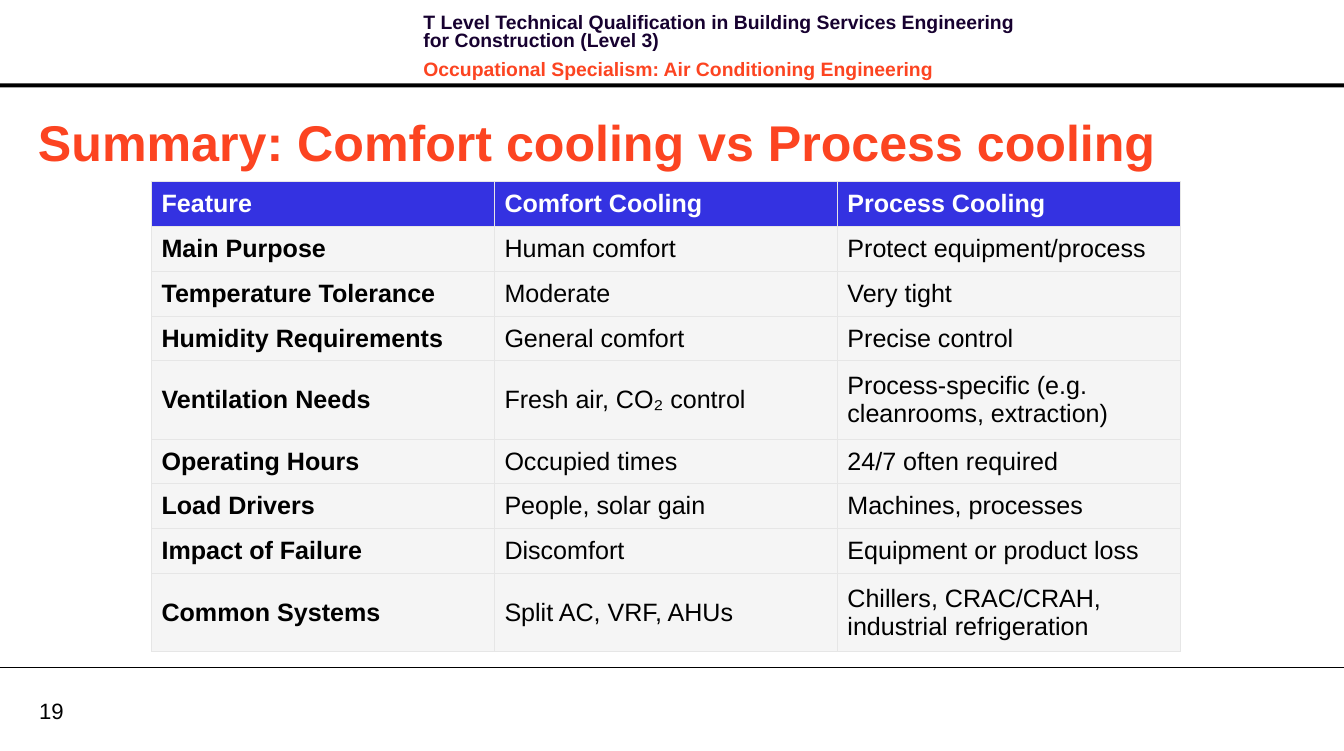
from lxml import etree
from pptx import Presentation
from pptx.dml.color import RGBColor
from pptx.enum.shapes import MSO_CONNECTOR, MSO_SHAPE
from pptx.enum.text import MSO_ANCHOR
from pptx.oxml.ns import qn
from pptx.util import Inches, Pt

MIDDLE, TOP = MSO_ANCHOR.MIDDLE, MSO_ANCHOR.TOP
RECTANGLE, STRAIGHT = MSO_SHAPE.RECTANGLE, MSO_CONNECTOR.STRAIGHT
COLORS = {
    "black": "000000", "white": "FFFFFF", "navy": "170130", "orange": "FC4421",
    "header": "3432E1", "body": "F5F5F5", "border": "E6E6E6",
}
WIDTH, HEIGHT = 13.39, 7.48


def rgb(name):
    return RGBColor.from_string(COLORS[name])


def style(paragraph, text, size, color, bold=False):
    """Fill a paragraph with one Arial run."""
    run = paragraph.add_run()
    run.text = text
    for key, value in {"name": "Arial", "size": Pt(size), "bold": bold}.items():
        setattr(run.font, key, value)
    run.font.color.rgb = rgb(color)


prs = Presentation()
prs.slide_width, prs.slide_height = Inches(WIDTH), Inches(HEIGHT)
slide = prs.slides.add_slide(prs.slide_layouts[6])
shapes = slide.shapes

# Header bar and footer rule
header_bar = shapes.add_shape(RECTANGLE, 0, Inches(0.83), Inches(WIDTH), Inches(0.04))
header_bar.shadow.inherit = False
header_bar.fill.solid()
header_bar.fill.fore_color.rgb = rgb("black")
header_bar.line.fill.background()

footer_rule = shapes.add_connector(STRAIGHT, 0, Inches(6.65), Inches(WIDTH), Inches(6.65))
footer_rule.line.color.rgb = rgb("black")
footer_rule.line.width = Pt(0.75)
etree.SubElement(footer_rule._element.spPr, qn("a:effectLst"))

# Text boxes: place, horizontal and vertical inset, anchor, paragraph format, lines
course_format = {"line_spacing": Pt(13), "space_after": Pt(4)}
texts = [
    ((4.12, 0.1, 6.17, 0.64), (0.1, 0.05), TOP, course_format, [
        ("T Level Technical Qualification in Building Services Engineering "
         "for Construction (Level 3)", 13.9, "navy", True),
        ("Occupational Specialism: Air Conditioning Engineering", 13.9, "orange", True),
    ]),
    ((0.39, 6.94, 0.64, 0.27), (0, 0), MIDDLE, {}, [("19", 15.9, "black")]),
    ((0.28, 1.05, 12.72, 0.71), (0.1, 0.05), MIDDLE, {}, [
        ("Summary: Comfort cooling vs Process cooling", 36, "orange", True),
    ]),
]
for place, (inset_x, inset_y), anchor, paragraph_format, lines in texts:
    frame = shapes.add_textbox(*map(Inches, place)).text_frame
    frame.word_wrap = True
    frame.vertical_anchor = anchor
    frame.margin_left = frame.margin_right = Inches(inset_x)
    frame.margin_top = frame.margin_bottom = Inches(inset_y)
    for index, line in enumerate(lines):
        paragraph = frame.add_paragraph() if index else frame.paragraphs[0]
        for key, value in paragraph_format.items():
            setattr(paragraph, key, value)
        if index:
            paragraph.space_before = Pt(4)
        style(paragraph, *line)

# Comparison table
features = [
    ("Feature", "Comfort Cooling", "Process Cooling"),
    ("Main Purpose", "Human comfort", "Protect equipment/process"),
    ("Temperature Tolerance", "Moderate", "Very tight"),
    ("Humidity Requirements", "General comfort", "Precise control"),
    ("Ventilation Needs", "Fresh air, CO₂ control",
     "Process‑specific (e.g. cleanrooms, extraction)"),
    ("Operating Hours", "Occupied times", "24/7 often required"),
    ("Load Drivers", "People, solar gain", "Machines, processes"),
    ("Impact of Failure", "Discomfort", "Equipment or product loss"),
    ("Common Systems", "Split AC, VRF, AHUs",
     "Chillers, CRAC/CRAH, industrial refrigeration"),
]
TABLE_WIDTH, TABLE_HEIGHT = 10.25, 4.68
TALL_ROWS, TALL = (4, 8), 0.78
SHORT = (TABLE_HEIGHT - TALL * len(TALL_ROWS)) / (len(features) - len(TALL_ROWS))

comparison = shapes.add_table(
    len(features), 3, Inches(1.51), Inches(1.81), Inches(TABLE_WIDTH), Inches(TABLE_HEIGHT)
).table
comparison.horz_banding = False
for column in comparison.columns:
    column.width = Inches(TABLE_WIDTH / 3)

for r, feature in enumerate(features):
    comparison.rows[r].height = Inches(TALL if r in TALL_ROWS else SHORT)
    for c, text in enumerate(feature):
        cell = comparison.cell(r, c)
        cell.vertical_anchor = MIDDLE
        style(cell.text_frame.paragraphs[0], text, 18,
              "black" if r else "white", r == 0 or c == 0)
        properties = cell._tc.get_or_add_tcPr()
        for side in ("a:lnL", "a:lnR", "a:lnT", "a:lnB"):
            border = etree.SubElement(properties, qn(side), w=str(Pt(0.5)))
            border_fill = etree.SubElement(border, qn("a:solidFill"))
            etree.SubElement(border_fill, qn("a:srgbClr"), val=COLORS["border"])
        cell.fill.solid()
        cell.fill.fore_color.rgb = rgb("body" if r else "header")

prs.save("out.pptx")
